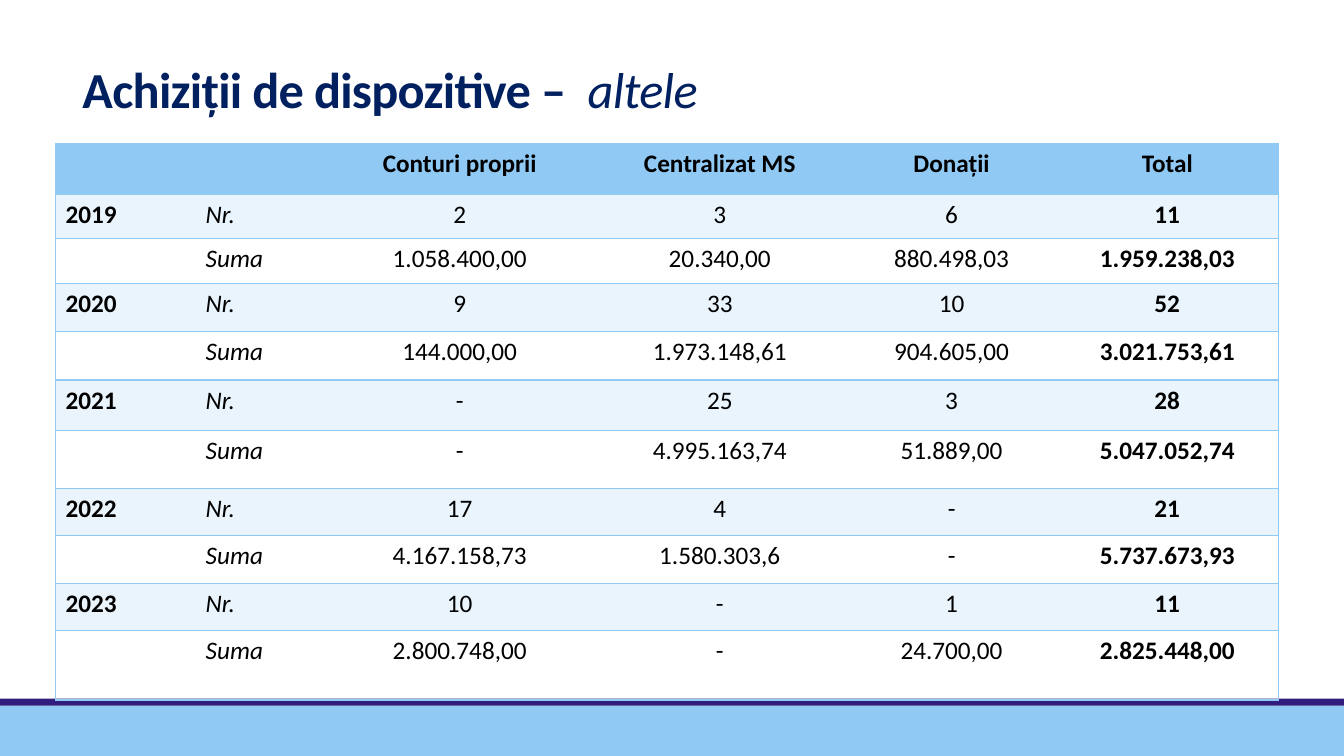
from typing import NamedTuple

from lxml import etree
from pptx import Presentation
from pptx.dml.color import RGBColor
from pptx.enum.shapes import MSO_SHAPE
from pptx.enum.text import MSO_ANCHOR, PP_ALIGN
from pptx.oxml.ns import qn
from pptx.slide import Slide
from pptx.table import _Cell
from pptx.text.text import _Paragraph, _Run
from pptx.util import Emu, Inches, Pt

RECTANGLE = MSO_SHAPE.RECTANGLE
BOTTOM = MSO_ANCHOR.BOTTOM
LEFT, CENTER = PP_ALIGN.LEFT, PP_ALIGN.CENTER

SLIDE_WIDTH, SLIDE_HEIGHT = Inches(13.33), Inches(7.5)
FONT = "Calibri"
SKY, PALE, PURPLE, NAVY, BLACK = "8FC9F4", "E9F4FD", "301D7D", "002060", "000000"
PLAIN_TABLE_STYLE = "{2D5ABB26-0587-4C30-8999-92F81FD0307C}"

# Shares of the slide, in percent
TABLE_LEFT, TABLE_TOP = 4.13, 18.93
COLUMN_SHARES = [10.43, 9.75, 19.8, 18.9, 15.6, 16.5]
ROW_SHARES = [6.8, 5.87, 5.87, 6.4, 6.4, 6.67, 7.67, 6.27, 6.27, 6.27, 9.2]


class Band(NamedTuple):
    top: float
    height: float
    color: str


class Year(NamedTuple):
    label: str
    counts: list[str]
    sums: list[str]


FOOTER_BANDS = [Band(93.33, 6.67, SKY), Band(92.4, 0.93, PURPLE)]
HEADINGS = ["", "", "Conturi proprii", "Centralizat MS", "Donații", "Total"]
YEARS = [
    Year("2019", ["2", "3", "6", "11"],
         ["1.058.400,00", "20.340,00", "880.498,03", "1.959.238,03"]),
    Year("2020", ["9", "33", "10", "52"],
         ["144.000,00", "1.973.148,61", "904.605,00", "3.021.753,61"]),
    Year("2021", ["-", "25", "3", "28"],
         ["-", "4.995.163,74", "51.889,00", "5.047.052,74"]),
    Year("2022", ["17", "4", "-", "21"],
         ["4.167.158,73", "1.580.303,6", "-", "5.737.673,93"]),
    Year("2023", ["10", "-", "1", "11"],
         ["2.800.748,00", "-", "24.700,00", "2.825.448,00"]),
]


def across(percent: float) -> Emu:
    return Emu(round(SLIDE_WIDTH * percent / 100))


def down(percent: float) -> Emu:
    return Emu(round(SLIDE_HEIGHT * percent / 100))


def rgb(color: str) -> RGBColor:
    return RGBColor.from_string(color)


def add_run(paragraph: _Paragraph, text: str, size: float, color: str,
            bold: bool = False, italic: bool = False) -> _Run:
    run = paragraph.add_run()
    run.text = text
    font = run.font
    font.name, font.size, font.bold, font.italic = FONT, Pt(size), bold, italic
    font.color.rgb = rgb(color)
    return run


def add_band(slide: Slide, band: Band) -> None:
    stripe = slide.shapes.add_shape(
        RECTANGLE, 0, down(band.top), SLIDE_WIDTH, down(band.height))
    stripe.shadow.inherit = False
    stripe.fill.solid()
    stripe.fill.fore_color.rgb = rgb(band.color)
    stripe.line.fill.background()


def add_title(slide: Slide) -> None:
    title = slide.shapes.add_textbox(across(5.4), down(9.73), across(82.5), down(6.67))
    frame = title.text_frame
    frame.word_wrap = True
    frame.vertical_anchor = BOTTOM
    paragraph = frame.paragraphs[0]
    paragraph.line_spacing = 0.85
    subject = add_run(paragraph, "Achiziții de dispozitive –  ", 36, NAVY, bold=True)
    kind = add_run(paragraph, "altele", 36, NAVY, italic=True)
    for run in (subject, kind):
        run.font._element.set("spc", "-50")


def draw_borders(cell: _Cell, sides: str) -> None:
    """Line the given sides, named by letter in the order L, R, T, B."""
    properties = cell._tc.get_or_add_tcPr()
    for side in sides:
        line = etree.SubElement(properties, qn(f"a:ln{side}"), w=str(Pt(1)))
        fill = etree.SubElement(line, qn("a:solidFill"))
        etree.SubElement(fill, qn("a:srgbClr"), val=SKY)


def fill_cell(cell: _Cell, text: str, row: int, column: int) -> None:
    last_column = len(COLUMN_SHARES) - 1
    outer_side = {0: "L", last_column: "R"}.get(column, "")
    draw_borders(cell, outer_side + "TB")

    if row == 0 or row % 2:
        cell.fill.solid()
        cell.fill.fore_color.rgb = rgb(PALE if row else SKY)
    else:
        cell.fill.background()

    paragraph = cell.text_frame.paragraphs[0]
    paragraph.alignment = LEFT if column < 2 else CENTER
    if text:
        add_run(paragraph, text, 18, BLACK,
                bold=row == 0 or column in (0, last_column), italic=column == 1)


def add_purchases_table(slide: Slide) -> None:
    lines = [HEADINGS]
    for year in YEARS:
        lines.append([year.label, "Nr.", *year.counts])
        lines.append(["", "Suma", *year.sums])

    table = slide.shapes.add_table(
        len(lines), len(HEADINGS), across(TABLE_LEFT), down(TABLE_TOP),
        across(sum(COLUMN_SHARES)), down(sum(ROW_SHARES))).table
    table.first_row = table.horz_banding = False
    table._tbl.tblPr.find(qn("a:tableStyleId")).text = PLAIN_TABLE_STYLE

    for column, share in zip(table.columns, COLUMN_SHARES):
        column.width = across(share)
    for row, share in zip(table.rows, ROW_SHARES):
        row.height = down(share)
    for row_index, line in enumerate(lines):
        for column_index, text in enumerate(line):
            fill_cell(table.cell(row_index, column_index), text, row_index, column_index)


def main() -> None:
    deck = Presentation()
    deck.slide_width, deck.slide_height = SLIDE_WIDTH, SLIDE_HEIGHT
    slide = deck.slides.add_slide(deck.slide_layouts[6])
    for band in FOOTER_BANDS:
        add_band(slide, band)
    add_title(slide)
    add_purchases_table(slide)
    deck.save("out.pptx")


if __name__ == "__main__":
    main()
